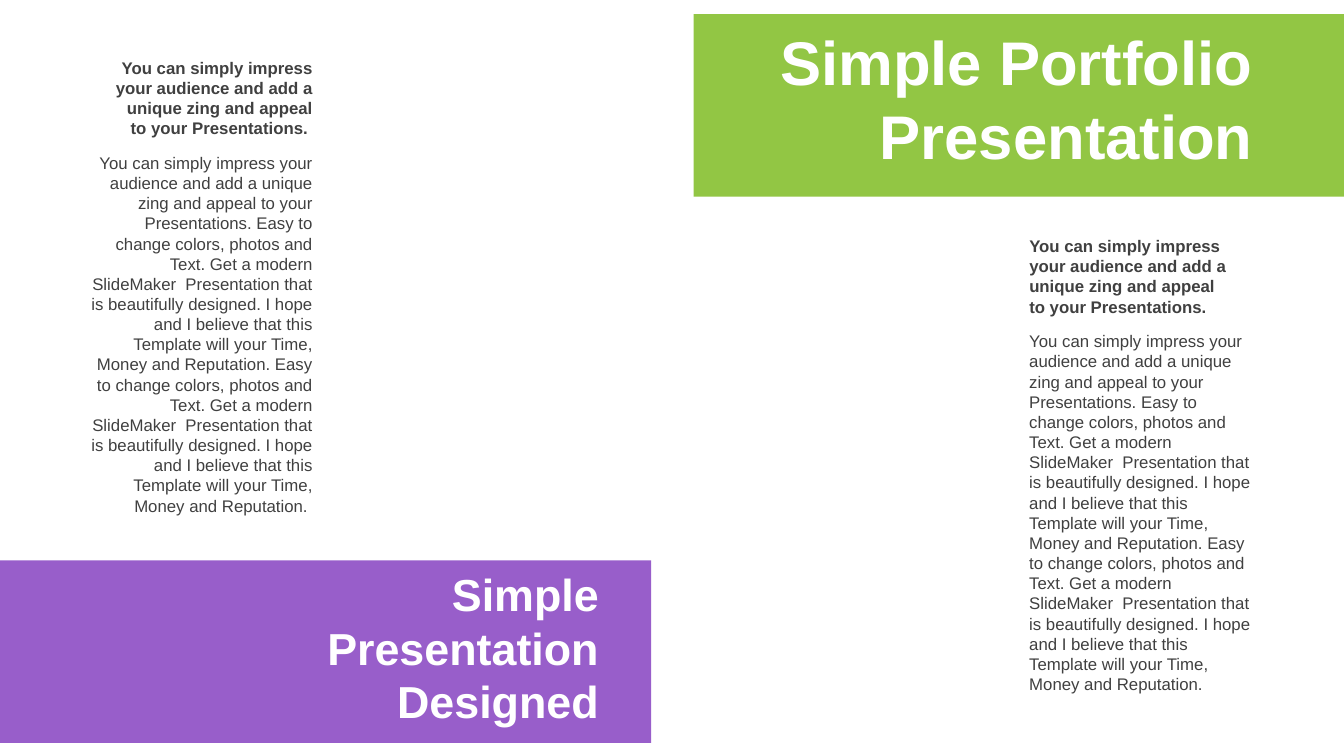
import dataclasses

import pptx
import pptx.dml.color
import pptx.enum.shapes
import pptx.enum.text
import pptx.util

Inches = pptx.util.Inches
ALIGN = pptx.enum.text.PP_ALIGN
ANCHOR = pptx.enum.text.MSO_ANCHOR
FIT = pptx.enum.text.MSO_AUTO_SIZE


@dataclasses.dataclass(frozen=True)
class Theme:
    """Colours, font and type sizes of the slide."""
    purple: str = "985ECA"
    green: str = "92C644"
    white: str = "FFFFFF"
    ink: str = "404040"
    font: str = "Arial"
    title_size: int = 44
    subtitle_size: int = 32
    body_size: int = 12


THEME = Theme()
LEAD = ("You can simply impress your audience and add a unique zing "
        "and appeal to your Presentations.")
PITCH = (" Easy to change colors, photos and Text. Get a modern SlideMaker  Presentation "
         "that is beautifully designed. I hope and I believe that this Template will "
         "your Time, Money and Reputation.")
STORY = LEAD + PITCH * 2


def rgb(value):
    """Turn a hex string into a colour."""
    return pptx.dml.color.RGBColor.from_string(value)


def place(shape, left, top, width, height):
    """Move a shape to a box given in inches."""
    shape.left, shape.top = Inches(left), Inches(top)
    shape.width, shape.height = Inches(width), Inches(height)


def write(frame, lines, size, color, bold, align, spacing=1.0, before=0):
    """Fill a text frame with one styled paragraph per line."""
    frame.word_wrap = True
    for index, line in enumerate(lines):
        paragraph = frame.add_paragraph() if index else frame.paragraphs[0]
        paragraph.alignment = align
        paragraph.line_spacing = spacing
        paragraph.space_before = pptx.util.Pt(before)
        run = paragraph.add_run()
        run.text = line
        run.font.name = THEME.font
        run.font.size = pptx.util.Pt(size)
        run.font.bold = bold
        run.font.color.rgb = rgb(color)


def add_band(slide, left, top, width, height, color):
    """Draw a plain coloured band."""
    band = slide.shapes.add_shape(
        pptx.enum.shapes.MSO_SHAPE.RECTANGLE,
        Inches(left), Inches(top), Inches(width), Inches(height))
    band.shadow.inherit = False
    band.fill.solid()
    band.fill.fore_color.rgb = rgb(color)
    band.line.fill.background()


def write_heading(heading, lines, size):
    """Set white, right-aligned heading lines, centred vertically."""
    frame = heading.text_frame
    frame.auto_size = FIT.NONE
    frame.vertical_anchor = ANCHOR.MIDDLE
    write(frame, lines, size, THEME.white, True, ALIGN.RIGHT, 0.8, round(size * 0.23, 1))


def add_title_band(slide, left, top, width, height):
    """Place the green band with the slide title over it."""
    add_band(slide, left, top, width, height, THEME.green)
    title = slide.shapes.title
    title.element.getparent().append(title.element)
    place(title, left + 0.02, top + 0.09, width - 0.83, height - 0.19)
    write_heading(title, ["Simple Portfolio", "Presentation"], THEME.title_size)


def add_subtitle_band(slide, left, top, width, height):
    """Place the purple band with its three-line heading."""
    add_band(slide, left, top, width, height, THEME.purple)
    subtitle = slide.shapes.add_textbox(
        Inches(left + 1.74), Inches(top - 0.03), Inches(4.3), Inches(height + 0.07))
    write_heading(subtitle, ["Simple", "Presentation", "Designed"], THEME.subtitle_size)


def add_column(slide, left, top, width, align, ending=""):
    """Place a bold lead above its body text."""
    lead_width = width - 0.21
    lead_left = left + width - lead_width if align == ALIGN.RIGHT else left
    parts = [(LEAD, lead_left, top, lead_width, 0.91, True),
             (STORY, left, top + 0.945, width, 3.74, False)]
    for words, part_left, part_top, part_width, part_height, bold in parts:
        passage = slide.shapes.add_textbox(
            Inches(part_left), Inches(part_top), Inches(part_width), Inches(part_height))
        passage.text_frame.auto_size = FIT.SHAPE_TO_FIT_TEXT
        write(passage.text_frame, [words + ending], THEME.body_size, THEME.ink, bold, align)


def main():
    """Build and save the slide."""
    deck = pptx.Presentation()
    deck.slide_width, deck.slide_height = Inches(13.33), Inches(7.5)
    slide = deck.slides.add_slide(deck.slide_layouts.get_by_name("Title Only"))
    add_subtitle_band(slide, 0, 5.56, 6.46, 1.81)
    add_title_band(slide, 6.88, 0.14, 6.46, 1.81)
    add_column(slide, 0.8, 0.52, 2.4, ALIGN.RIGHT, " ")
    add_column(slide, 10.11, 2.29, 2.4, ALIGN.LEFT)
    deck.save("out.pptx")


if __name__ == "__main__":
    main()
